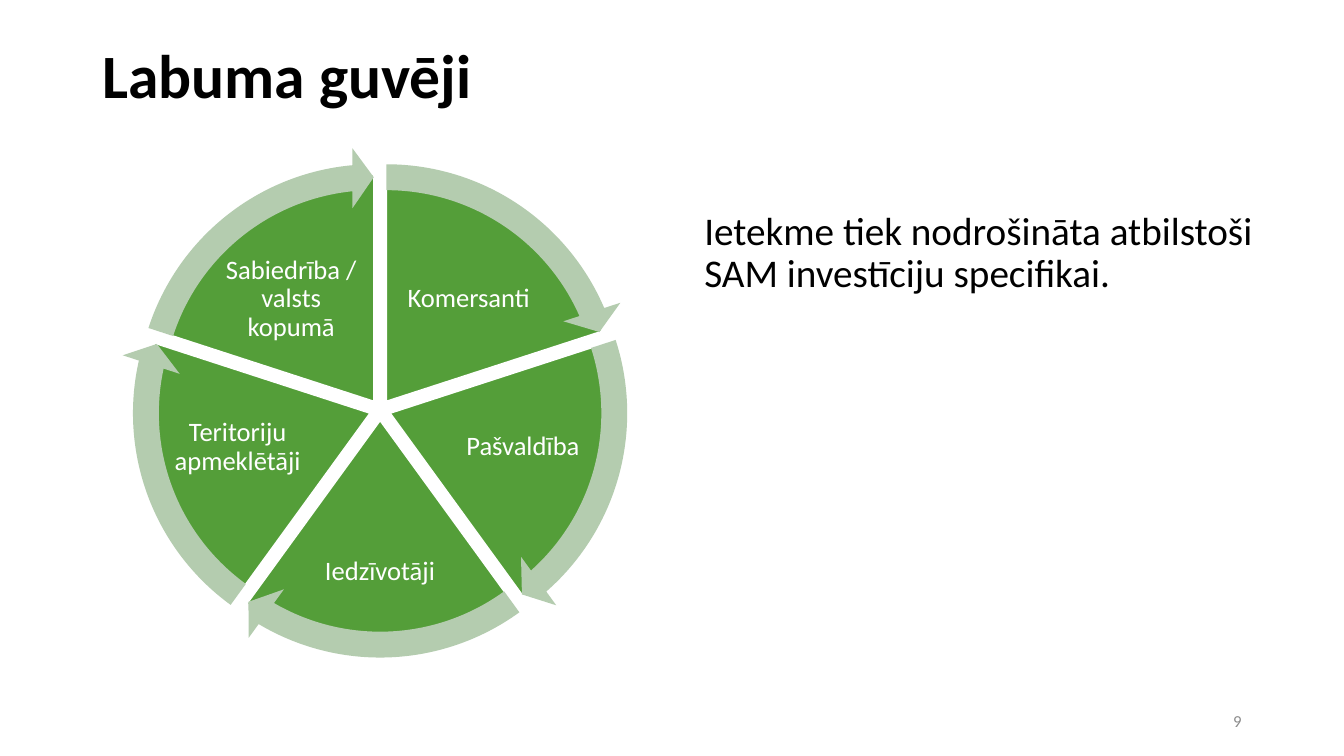
from dataclasses import dataclass
from math import cos, radians, sin

from pptx import Presentation
from pptx.dml.color import RGBColor
from pptx.enum.shapes import MSO_SHAPE
from pptx.enum.text import MSO_ANCHOR, PP_ALIGN
from pptx.util import Cm, Pt

PIE, ARROW = MSO_SHAPE.PIE, MSO_SHAPE.CIRCULAR_ARROW
TOP, MIDDLE = MSO_ANCHOR.TOP, MSO_ANCHOR.MIDDLE
LEFT, CENTER, RIGHT = PP_ALIGN.LEFT, PP_ALIGN.CENTER, PP_ALIGN.RIGHT

FONT = "Calibri"
GREEN, PALE, WHITE, BLACK, GREY = "549E39", "B4CCAF", "FFFFFF", "000000", "8C8C8C"
HUB_X, HUB_Y = 9.58, 10.33
SHIFT = 0.27  # how far each sector moves out from the hub
PIE_SIZE, RING_SIZE = 11.4, 12.8
UNIT = 0.6  # one degree as an adjustment value


@dataclass
class Box:
    left: float
    top: float
    width: float
    height: float


@dataclass
class Style:
    size: float
    color: str
    align: PP_ALIGN = LEFT
    anchor: MSO_ANCHOR = TOP
    bold: bool = False
    spacing: float = 0.9
    inset: float | None = None


@dataclass
class Sector:
    text: str
    box: Box


SECTORS = [
    Sector("Komersanti", Box(9.98, 6.32, 3.66, 2.44)),
    Sector("Pašvaldība", Box(11.48, 9.91, 3.4, 2.72)),
    Sector("Iedzīvotāji", Box(7.95, 12.9, 3.25, 3)),
    Sector("Teritoriju apmeklētāji", Box(4.29, 9.91, 3.4, 2.72)),
    Sector("Sabiedrība / valsts kopumā", Box(5.51, 6.32, 3.66, 2.44)),
]
STEP = 360 / len(SECTORS)
LABEL = Style(19, WHITE, CENTER, MIDDLE, inset=0.08)


def rgb(color: str) -> RGBColor:
    return RGBColor.from_string(color)


def add_text(slide, text: str, box: Box, style: Style) -> None:
    shape = slide.shapes.add_textbox(
        Cm(box.left), Cm(box.top), Cm(box.width), Cm(box.height))
    frame = shape.text_frame
    frame.word_wrap = True
    frame.vertical_anchor = style.anchor
    if style.inset is not None:
        frame.margin_left = frame.margin_right = Cm(style.inset)
        frame.margin_top = frame.margin_bottom = Cm(style.inset)
    para = frame.paragraphs[0]
    para.text = text
    para.alignment = style.align
    para.line_spacing = style.spacing
    font = para.font
    font.name, font.size, font.bold = FONT, Pt(style.size), style.bold
    font.color.rgb = rgb(style.color)


def add_round(slide, kind: MSO_SHAPE, index: int, size: float, fill: str,
              adjust: list[float]):
    """Add a round shape moved out from the hub along its sector's middle."""
    angle = radians(270 + STEP * (index + 0.5))
    left = HUB_X + SHIFT * cos(angle) - size / 2
    top = HUB_Y + SHIFT * sin(angle) - size / 2
    shape = slide.shapes.add_shape(kind, Cm(left), Cm(top), Cm(size), Cm(size))
    shape.shadow.inherit = False
    shape.fill.solid()
    shape.fill.fore_color.rgb = rgb(fill)
    shape.line.fill.background()
    for place, value in enumerate(adjust):
        shape.adjustments[place] = value
    return shape


def turn(index: float) -> float:
    """Give the start angle of a sector as an adjustment value."""
    return (270 + STEP * index) % 360 * UNIT


def add_wheel(slide) -> None:
    for index, sector in enumerate(SECTORS):
        pie = add_round(slide, PIE, index, PIE_SIZE, GREEN,
                        [turn(index), turn(index + 1)])
        pie.line.color.rgb = rgb(WHITE)
        pie.line.width = Pt(1)
        add_text(slide, sector.text, sector.box, LABEL)
    for index in range(len(SECTORS)):
        tip = (turn(index + 1) - 3.28) % 216
        add_round(slide, ARROW, index, RING_SIZE, PALE,
                  [0.051, 3.28, tip, turn(index), 0.059])


def main() -> None:
    deck = Presentation()
    deck.slide_width, deck.slide_height = Cm(33.87), Cm(19.05)
    slide = deck.slides.add_slide(deck.slide_layouts[6])
    add_text(slide, "9", Box(23.92, 17.66, 7.62, 1.01),
             Style(12, GREY, RIGHT, MIDDLE, spacing=1.0))
    add_text(slide, "Labuma guvēji", Box(2.33, 1.01, 29.21, 1.99),
             Style(44, BLACK, bold=True))
    add_wheel(slide)
    add_text(slide, "Ietekme tiek nodrošināta atbilstoši SAM investīciju specifikai.",
             Box(17.5, 5.2, 15.98, 7.44), Style(28, BLACK))
    deck.save("out.pptx")


if __name__ == "__main__":
    main()
